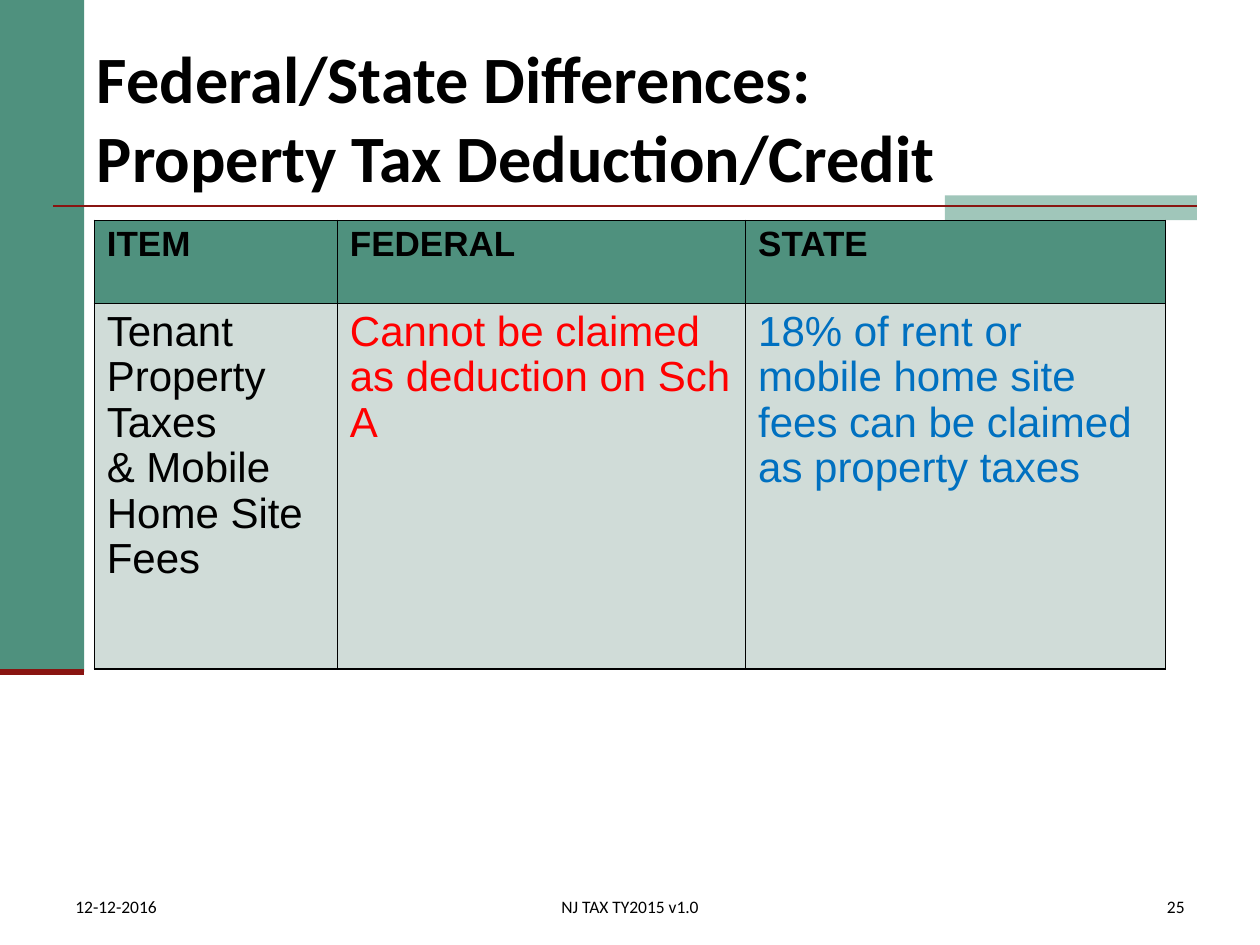
"""Build the property tax comparison slide."""
from dataclasses import dataclass

from lxml import etree
from pptx import Presentation
from pptx.dml.color import RGBColor
from pptx.enum import shapes, text
from pptx.oxml import ns
from pptx.util import Cm, Pt


@dataclass(frozen=True)
class Theme:
    """Colours, fonts and type sizes of the slide."""
    green: str = "4F917E"
    light_green: str = "A0C6BA"
    pale: str = "D0DCD8"
    maroon: str = "891411"
    black: str = "000000"
    red: str = "FF0000"
    blue: str = "0070C0"
    heading_font: str = "Calibri"
    body_font: str = "Arial"
    title_size: float = 37.8
    header_size: float = 20
    cell_size: float = 24
    footer_size: float = 10


THEME = Theme()
LEFT, CENTER, RIGHT = (text.PP_ALIGN.LEFT, text.PP_ALIGN.CENTER,
                       text.PP_ALIGN.RIGHT)


def add_run(p, content, size, font, color=THEME.black, bold=False):
    """Append one formatted run to a paragraph."""
    r = p.add_run()
    r.text = content
    r.font.size, r.font.name, r.font.bold = Pt(size), font, bold
    r.font.color.rgb = RGBColor.from_string(color)


def add_block(s, left, top, width, height, color):
    """Add a plain filled rectangle."""
    sp = s.shapes.add_shape(shapes.MSO_SHAPE.RECTANGLE,
                            Cm(left), Cm(top), Cm(width), Cm(height))
    sp.shadow.inherit = False
    sp.fill.solid()
    sp.fill.fore_color.rgb = RGBColor.from_string(color)
    sp.line.fill.background()


def add_rule(s, left, right, y, weight):
    """Add a horizontal maroon rule."""
    line = s.shapes.add_connector(shapes.MSO_CONNECTOR.STRAIGHT,
                                  Cm(left), Cm(y), Cm(right), Cm(y))
    line.line.color.rgb = RGBColor.from_string(THEME.maroon)
    line.line.width = Pt(weight)
    etree.SubElement(line._element.spPr, ns.qn("a:effectLst"))


def set_title(s, lines):
    """Place the title and write its lines."""
    sp = s.shapes.title
    sp.left, sp.top, sp.width, sp.height = Cm(1.7), Cm(0.76), Cm(22.43), Cm(3.18)
    tf = sp.text_frame
    tf.vertical_anchor = text.MSO_ANCHOR.MIDDLE
    tf.auto_size = text.MSO_AUTO_SIZE.NONE
    p = tf.paragraphs[0]
    p.alignment = LEFT
    for i, line in enumerate(lines):
        if i:
            p.add_line_break()
        add_run(p, line, THEME.title_size, THEME.heading_font, bold=True)


def set_borders(cell):
    """Draw a thin black line on every side of a cell."""
    tc_pr = cell._tc.get_or_add_tcPr()
    for side in ("lnL", "lnR", "lnT", "lnB"):
        ln = etree.SubElement(tc_pr, ns.qn(f"a:{side}"), w=str(Pt(1)))
        fill = etree.SubElement(ln, ns.qn("a:solidFill"))
        etree.SubElement(fill, ns.qn("a:srgbClr"), val=THEME.black)


def fill_cell(cell, lines, fill, size, color, bold):
    """Write and format one table cell."""
    set_borders(cell)
    cell.fill.solid()
    cell.fill.fore_color.rgb = RGBColor.from_string(fill)
    tf = cell.text_frame
    for i, line in enumerate(lines):
        p = tf.add_paragraph() if i else tf.paragraphs[0]
        p.line_spacing = 0.97
        add_run(p, line, size, THEME.body_font, color, bold)


def add_comparison(s, columns):
    """Add the table from (width, header, lines, colour) columns."""
    heights = (1.68, 7.37)
    width = sum(column[0] for column in columns)
    table = s.shapes.add_table(2, len(columns), Cm(1.9), Cm(4.44),
                               Cm(width), Cm(sum(heights))).table
    table.first_row = table.horz_banding = False
    for row, height in zip(table.rows, heights):
        row.height = Cm(height)
    for i, (width, header, lines, color) in enumerate(columns):
        table.columns[i].width = Cm(width)
        fill_cell(table.cell(0, i), [header], THEME.green,
                  THEME.header_size, THEME.black, True)
        fill_cell(table.cell(1, i), lines, THEME.pale,
                  THEME.cell_size, color, False)


def add_footer(s, left, width, content, align):
    """Add one footer text box."""
    tf = s.shapes.add_textbox(Cm(left), Cm(17.78), Cm(width), Cm(0.84)).text_frame
    tf.word_wrap = True
    tf.vertical_anchor = text.MSO_ANCHOR.BOTTOM
    p = tf.paragraphs[0]
    p.alignment = align
    add_run(p, content, THEME.footer_size, THEME.heading_font)


def main():
    """Build and save the slide."""
    prs = Presentation()
    prs.slide_width, prs.slide_height = Cm(25.4), Cm(19.05)
    s = prs.slides.add_slide(prs.slide_layouts[5])
    add_block(s, 0, 0, 1.7, 13.55, THEME.green)
    add_block(s, 19.05, 3.94, 5.08, 0.5, THEME.light_green)
    add_rule(s, 1.07, 24.13, 4.15, 1.5)
    add_rule(s, 0, 1.7, 13.55, 3.5)
    set_title(s, ["Federal/State Differences:", "Property Tax Deduction/Credit"])
    add_comparison(s, [
        (4.9, "ITEM", ["Tenant", "Property Taxes", "& Mobile Home Site Fees"],
         THEME.black),
        (8.23, "FEDERAL", ["Cannot be claimed as deduction on Sch A"], THEME.red),
        (8.46, "STATE", ["18% of rent or mobile home site fees can be claimed "
                         "as property taxes"], THEME.blue),
    ])
    add_footer(s, 1.27, 5.5, "12-12-2016", LEFT)
    add_footer(s, 8.41, 8.58, "NJ TAX TY2015 v1.0", CENTER)
    add_footer(s, 18.85, 5.28, "25", RIGHT)
    prs.save("out.pptx")


if __name__ == "__main__":
    main()
